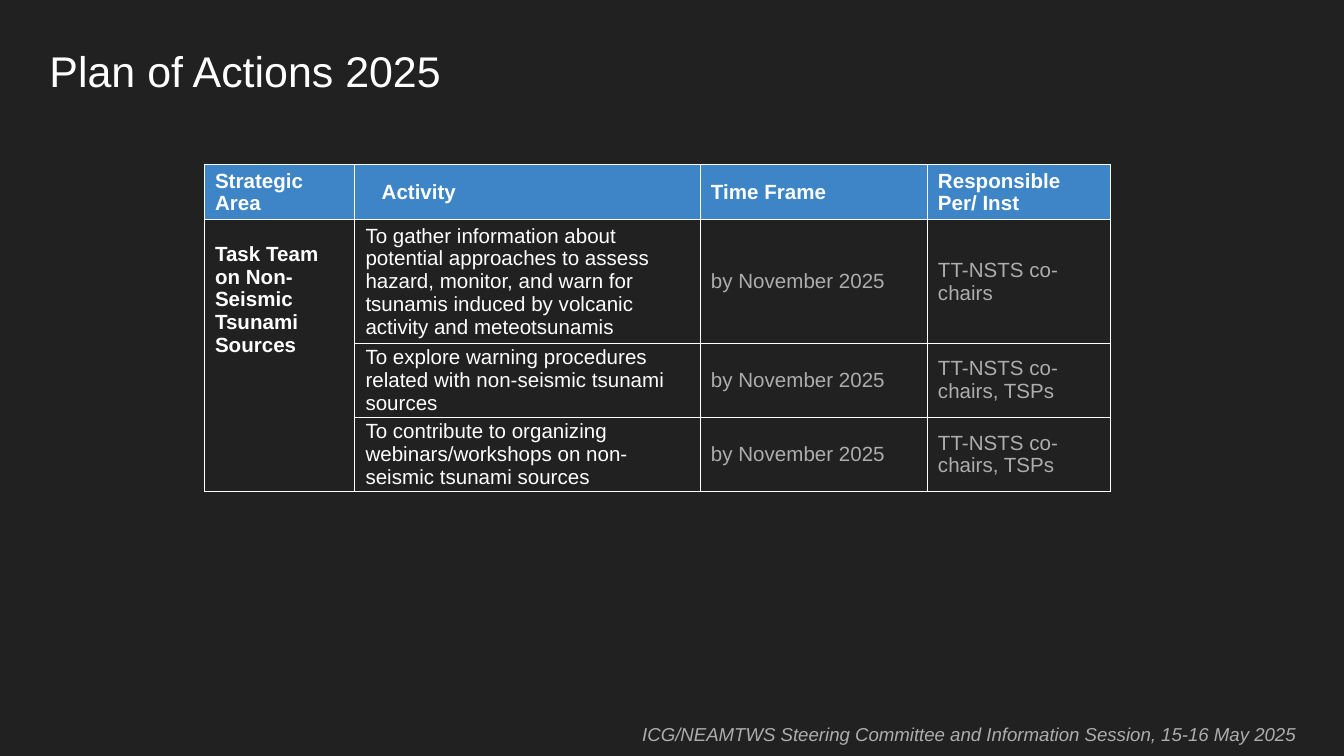
from dataclasses import dataclass
from lxml import etree
from pptx import Presentation
from pptx.dml.color import RGBColor
from pptx.enum.text import MSO_ANCHOR, MSO_AUTO_SIZE
from pptx.oxml.ns import qn
from pptx.util import Inches, Pt

MIDDLE, TOP = MSO_ANCHOR.MIDDLE, MSO_ANCHOR.TOP
GROW = MSO_AUTO_SIZE.SHAPE_TO_FIT_TEXT
PAGE_WIDTH = 10
PAGE_HEIGHT = PAGE_WIDTH * 9 / 16


@dataclass(frozen=True)
class Theme:
    font: str = "Arial"
    background: str = "212121"
    header: str = "3D85C6"
    white: str = "FFFFFF"
    grey: str = "ADADAD"
    title_size: float = 23
    table_size: float = 11
    footer_size: float = 10
    border_width: float = 0.5


@dataclass(frozen=True)
class Label:
    """A line of text; its place is given in percent of the slide's size."""
    text: str
    left: float
    top: float
    width: float
    height: float
    size: float
    color: str
    italic: bool = False


@dataclass(frozen=True)
class Action:
    activity: str
    responsible: str
    height: float
    time_frame: str = "by November 2025"


THEME = Theme()

LABELS = [
    Label("Plan of Actions 2025", 2.7, 4.1, 33.7, 10.5,
          THEME.title_size, THEME.white),
    Label("ICG/NEAMTWS Steering Committee and Information Session, 15-16 May 2025",
          46.8, 94.1, 52.8, 6.6, THEME.footer_size, THEME.grey, True),
]

# Table content and grid
HEADERS = ["Strategic Area", "Activity", "Time Frame", "Responsible Per/ Inst"]
STRATEGIC_AREA = "Task Team on Non-Seismic Tsunami Sources"
ACTIONS = [
    Action("To gather information about potential approaches to assess hazard, "
           "monitor, and warn for tsunamis induced by volcanic activity and "
           "meteotsunamis", "TT-NSTS co-chairs", 0.91),
    Action("To explore warning procedures related with non-seismic tsunami sources",
           "TT-NSTS co-chairs, TSPs", 0.55),
    Action("To contribute to organizing webinars/workshops on non-seismic tsunami "
           "sources", "TT-NSTS co-chairs, TSPs", 0.55),
]
TABLE_LEFT, TABLE_TOP = 15.2, 21.8
COLUMN_WIDTHS = [1.12, 2.57, 1.69, 1.36]
ROW_HEIGHTS = [0.41] + [action.height for action in ACTIONS]


def across(percent: float) -> int:
    return Inches(PAGE_WIDTH * percent / 100)


def down(percent: float) -> int:
    return Inches(PAGE_HEIGHT * percent / 100)


def write(frame, text: str, size: float, color: str, **styles: bool) -> None:
    para = frame.paragraphs[0]
    span = para.add_run()
    span.text = text
    formats = {"name": THEME.font, "size": Pt(size), **styles}
    for name, value in formats.items():
        setattr(span.font, name, value)
    span.font.color.rgb = RGBColor.from_string(color)


def draw_label(page, label: Label) -> None:
    box = page.shapes.add_textbox(across(label.left), down(label.top),
                                  across(label.width), down(label.height))
    frame = box.text_frame
    sides = ("left", "top", "right", "bottom")
    formats = {"word_wrap": True, "auto_size": GROW,
               **{f"margin_{side}": Inches(0.1) for side in sides}}
    for name, value in formats.items():
        setattr(frame, name, value)
    write(frame, label.text, label.size, label.color, italic=label.italic)


def outline(cell) -> None:
    """Border lines come ahead of the fill in the cell's properties."""
    properties = cell._tc.get_or_add_tcPr()
    for index, side in enumerate(("lnL", "lnR", "lnT", "lnB")):
        line = etree.Element(qn(f"a:{side}"), w=str(Pt(THEME.border_width)))
        fill = etree.SubElement(line, qn("a:solidFill"))
        etree.SubElement(fill, qn("a:srgbClr"), val=THEME.white)
        properties.insert(index, line)


def fill_cell(cell, text: str, color: str = THEME.white, bold: bool = False) -> None:
    formats = {"margin_left": Inches(0.08), "margin_right": Inches(0.08),
               "margin_top": 0, "margin_bottom": 0, "vertical_anchor": MIDDLE}
    for name, value in formats.items():
        setattr(cell, name, value)
    write(cell.text_frame, text, THEME.table_size, color, bold=bold)


def draw_table(page) -> None:
    table = page.shapes.add_table(
        len(ROW_HEIGHTS), len(COLUMN_WIDTHS), across(TABLE_LEFT), down(TABLE_TOP),
        Inches(sum(COLUMN_WIDTHS)), Inches(sum(ROW_HEIGHTS))).table
    table.first_row = table.horz_banding = False
    for column, width in zip(table.columns, COLUMN_WIDTHS):
        column.width = Inches(width)
    for row, height in zip(table.rows, ROW_HEIGHTS):
        row.height = Inches(height)
    for cell in table.iter_cells():
        cell.fill.background()
        outline(cell)

    # Header row, with a hanging indent on the activity heading
    for column, heading in enumerate(HEADERS):
        cell = table.cell(0, column)
        cell.fill.solid()
        cell.fill.fore_color.rgb = RGBColor.from_string(THEME.header)
        fill_cell(cell, heading, bold=True)
    heading_format = table.cell(0, 1).text_frame.paragraphs[0]._p.get_or_add_pPr()
    for name, length in {"marL": 0.32, "indent": -0.2}.items():
        heading_format.set(name, str(Inches(length)))

    # Strategic area beside all its actions, one line down from the top
    area = table.cell(1, 0)
    area.merge(table.cell(len(ACTIONS), 0))
    fill_cell(area, STRATEGIC_AREA, bold=True)
    area.vertical_anchor = TOP
    area.margin_top = Inches(0.17)

    # Actions
    for row, action in enumerate(ACTIONS, start=1):
        fill_cell(table.cell(row, 1), action.activity)
        fill_cell(table.cell(row, 2), action.time_frame, THEME.grey)
        fill_cell(table.cell(row, 3), action.responsible, THEME.grey)


def main() -> None:
    deck = Presentation()
    deck.slide_width, deck.slide_height = Inches(PAGE_WIDTH), Inches(PAGE_HEIGHT)
    page = deck.slides.add_slide(deck.slide_layouts[6])
    page.background.fill.solid()
    page.background.fill.fore_color.rgb = RGBColor.from_string(THEME.background)
    title, footer = LABELS
    draw_label(page, title)
    draw_table(page)
    draw_label(page, footer)
    deck.save("out.pptx")


if __name__ == "__main__":
    main()
